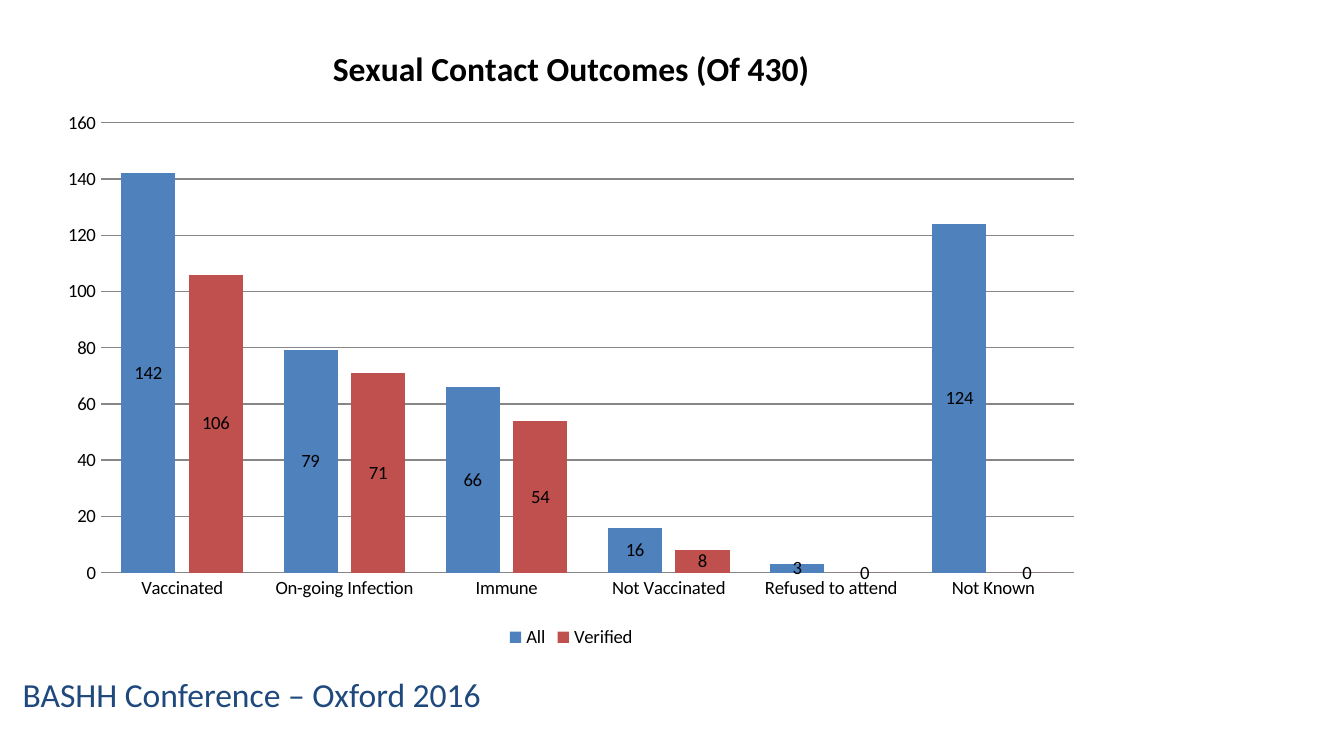
import pptx
import pptx.chart.data
import pptx.dml.color
import pptx.enum.chart
import pptx.util

WIDE = 10
HIGH = WIDE * 9 / 16
FACE = "Calibri"
GROUPS = ["Vaccinated", "On-going Infection", "Immune",
          "Not Vaccinated", "Refused to attend", "Not Known"]
SERIES = [("All", [142, 79, 66, 16, 3, 124], "4F81BD"),
          ("Verified", [106, 71, 54, 8, 0, 0], "C0504D")]


def place(x, y, w, h):
    """Turn percentages of the slide's size into lengths."""
    sides = (x * WIDE, y * HIGH, w * WIDE, h * HIGH)
    return [pptx.util.Inches(side / 100) for side in sides]


def paint(item, shade):
    """Give a fill a solid colour."""
    item.solid()
    item.fore_color.rgb = pptx.dml.color.RGBColor.from_string(shade)


def style(font, size, shade="000000", bold=False):
    """Set face, size, colour and weight of a font."""
    font.name = FACE
    font.size = pptx.util.Pt(size)
    font.bold = bold
    paint(font.fill, shade)


def add_text(slide, text, box, size, shade):
    """Add a one-line text box."""
    frame = slide.shapes.add_textbox(*place(*box)).text_frame
    frame.word_wrap = True
    line = frame.paragraphs[0]
    line.text = text
    style(line.font, size, shade)


def set_axes(chart):
    """Format both axes and the grid lines."""
    none = pptx.enum.chart.XL_TICK_MARK.NONE
    for axis in (chart.category_axis, chart.value_axis):
        axis.major_tick_mark = none
        axis.minor_tick_mark = none
        style(axis.tick_labels.font, 10)
    scale = chart.value_axis
    scale.minimum_scale, scale.maximum_scale, scale.major_unit = 0, 160, 20
    scale.format.line.fill.background()
    for line in (scale.major_gridlines.format.line,
                 chart.category_axis.format.line):
        paint(line.fill, "868686")
        line.width = pptx.util.Pt(0.75)


def set_bars(plot):
    """Colour the bars and label them at their centres."""
    plot.gap_width = 75
    plot.overlap = -25
    plot.vary_by_categories = False
    for bars, (_, _, shade) in zip(plot.series, SERIES):
        paint(bars.format.fill, shade)
        bars.invert_if_negative = False
        tags = bars.data_labels
        tags.show_value = True
        tags.position = pptx.enum.chart.XL_LABEL_POSITION.CENTER
        style(tags.font, 10)


def add_bars(slide, title, box):
    """Add the clustered column chart."""
    data = pptx.chart.data.CategoryChartData()
    data.categories = GROUPS
    for name, values, _ in SERIES:
        data.add_series(name, values)
    kind = pptx.enum.chart.XL_CHART_TYPE.COLUMN_CLUSTERED
    chart = slide.shapes.add_chart(kind, *place(*box), data).chart
    style(chart.font, 10)
    head = chart.chart_title.text_frame
    head.text = title
    style(head.paragraphs[0].font, 18, bold=True)
    chart.has_legend = True
    chart.legend.position = pptx.enum.chart.XL_LEGEND_POSITION.BOTTOM
    chart.legend.include_in_layout = False
    style(chart.legend.font, 10)
    set_axes(chart)
    set_bars(chart.plots[0])


def main():
    """Build and save the slide."""
    deck = pptx.Presentation()
    deck.slide_width = pptx.util.Inches(WIDE)
    deck.slide_height = pptx.util.Inches(HIGH)
    slide = deck.slides.add_slide(deck.slide_layouts[6])
    add_text(slide, "BASHH Conference – Oxford 2016",
             (0.7, 88.2, 47.8, 12.2), 18, "1F497D")
    add_bars(slide, "Sexual Contact Outcomes (Of 430)",
             (3.5, 2.5, 78, 83.9))
    deck.save("out.pptx")


if __name__ == "__main__":
    main()
